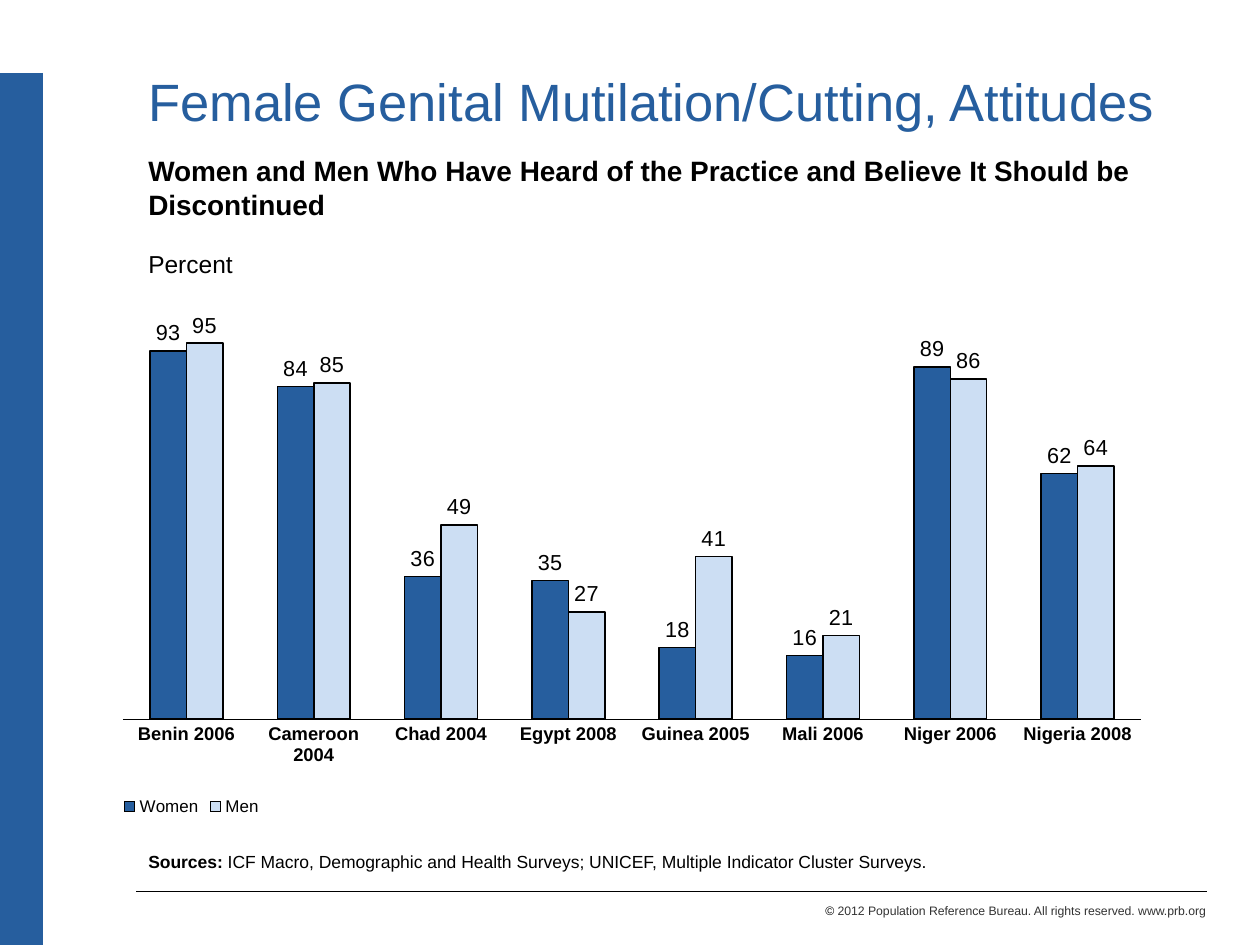
from lxml import etree
from pptx import Presentation
from pptx.chart.data import CategoryChartData
from pptx.dml.color import RGBColor
from pptx.enum.chart import XL_CHART_TYPE, XL_LABEL_POSITION, XL_LEGEND_POSITION, XL_TICK_MARK
from pptx.enum.shapes import MSO_CONNECTOR
from pptx.enum.text import PP_ALIGN
from pptx.oxml.ns import qn
from pptx.util import Cm, Pt

COLUMN = XL_CHART_TYPE.COLUMN_CLUSTERED
OUTSIDE = XL_LABEL_POSITION.OUTSIDE_END
BOTTOM = XL_LEGEND_POSITION.BOTTOM
NO_TICK = XL_TICK_MARK.NONE
STRAIGHT = MSO_CONNECTOR.STRAIGHT
LEFT, RIGHT = PP_ALIGN.LEFT, PP_ALIGN.RIGHT

FONT = "Arial"
BLUE, PALE, BLACK, GREY = "265E9E", "CCDEF3", "000000", "333333"
CATS = ["Benin 2006", "Cameroon 2004", "Chad 2004", "Egypt 2008",
        "Guinea 2005", "Mali 2006", "Niger 2006", "Nigeria 2008"]
SERIES = [
    ("Women", BLUE, [93, 84, 36, 35, 18, 16, 89, 62]),
    ("Men", PALE, [95, 85, 49, 27, 41, 21, 86, 64]),
]


def color(code):
    """Turn a hex string into a colour."""
    return RGBColor.from_string(code)


def style(font, size, code=BLACK, bold=False):
    """Set the look of a font."""
    font.name, font.size, font.bold = FONT, Pt(size), bold
    font.color.rgb = color(code)


def stroke(line, width, code=BLACK):
    """Set the width and colour of a line."""
    line.width = Pt(width)
    line.color.rgb = color(code)


def write(slide, box, *paras, size=10, align=LEFT, gap=0):
    """Add a text box; each paragraph is a list of (text, format) runs."""
    frame = slide.shapes.add_textbox(*map(Cm, box)).text_frame
    frame.word_wrap = True
    for index, runs in enumerate(paras):
        para = frame.add_paragraph() if index else frame.paragraphs[0]
        para.alignment = align
        para.space_before = Pt(gap if index else 0)
        for text, form in runs:
            run = para.add_run()
            run.text = text
            style(run.font, **{"size": size, **form})


def rule(slide, start, end, width, code=BLACK):
    """Draw a straight line without a shadow."""
    line = slide.shapes.add_connector(STRAIGHT, *map(Cm, start + end))
    stroke(line.line, width, code)
    etree.SubElement(line._element.spPr, qn("a:effectLst"))


def place(parent, index, **parts):
    """Give a chart part a manual layout."""
    for old in parent.findall(qn("c:layout")):
        parent.remove(old)
    layout = etree.Element(qn("c:layout"))
    manual = etree.SubElement(layout, qn("c:manualLayout"))
    for tag, value in parts.items():
        etree.SubElement(manual, qn("c:" + tag)).set("val", str(value))
    parent.insert(index, layout)


def header(slide, box):
    """Write the title, the subtitle and the unit."""
    left, top, width, height = box
    title = [("Female Genital Mutilation/Cutting, Attitudes", {"code": BLUE})]
    write(slide, (left, top, width, 2.74), title, size=30)
    lead = [("Women and Men Who Have Heard of the Practice and Believe It "
             "Should be Discontinued", {"size": 16, "bold": True})]
    write(slide, (left, top + 1.7, width, height - 1.7),
          lead, [("Percent", {"size": 14})], gap=16)


def bars(slide, box):
    """Add the column chart of women and men by country."""
    data = CategoryChartData()
    data.categories = CATS
    for name, _, vals in SERIES:
        data.add_series(name, vals)
    chart = slide.shapes.add_chart(COLUMN, *map(Cm, box), data).chart
    chart.has_title = False
    style(chart.font, 12.4, bold=True)

    plot = chart.plots[0]
    plot.gap_width, plot.overlap, plot.vary_by_categories = 150, 0, False
    for series, (_, code, _) in zip(plot.series, SERIES):
        series.format.fill.solid()
        series.format.fill.fore_color.rgb = color(code)
        stroke(series.format.line, 0.92)
        labels = series.data_labels
        labels.show_value, labels.position = True, OUTSIDE
        style(labels.font, 12.4)

    scale = chart.value_axis
    scale.minimum_scale, scale.maximum_scale = 0, 100
    scale.has_major_gridlines = scale.visible = False
    axis = chart.category_axis
    axis.major_tick_mark = axis.minor_tick_mark = NO_TICK
    stroke(axis.format.line, 0.23)
    style(axis.tick_labels.font, 10.5, bold=True)

    chart.has_legend = True
    legend = chart.legend
    legend.position, legend.include_in_layout = BOTTOM, False
    style(legend.font, 9.7)
    edge = {"xMode": "edge", "yMode": "edge"}
    place(legend._element, 1, **edge, x=0.01, y=0.92, w=0.14, h=0.07)
    place(chart._chartSpace.chart.plotArea, 0, layoutTarget="inner", **edge,
          x=0.014, y=0.024, w=0.975, h=0.762)


def footer(slide, box):
    """Write the sources, the rule below them and the copyright line."""
    left, top, width, height = box
    write(slide, (left, top, 19.89, 0.69),
          [("Sources: ", {"bold": True}),
           ("ICF Macro, Demographic and Health Surveys; UNICEF, "
            "Multiple Indicator Cluster Surveys.", {})])
    level = top + 0.94
    rule(slide, (left + width, level), (left, level), 0.5)
    write(slide, (left + 8.05, top + 1.04, width - 7.82, height - 1.04),
          [("© ", {}),
           ("2012 Population Reference Bureau. All rights reserved. "
            "www.prb.org", {"code": GREY})], size=7, align=RIGHT)


def main():
    """Build the slide and save it."""
    deck = Presentation()
    deck.slide_width, deck.slide_height = Cm(25.4), Cm(19.05)
    slide = deck.slides.add_slide(deck.slide_layouts[6])
    rule(slide, (0.43, 1.47), (0.43, 19.05), 25, BLUE)
    header(slide, (2.74, 1.27, 21.54, 4.42))
    bars(slide, (2.18, 6.27, 21.06, 10.46))
    footer(slide, (2.74, 17.04, 21.59, 1.6))
    deck.save("out.pptx")


if __name__ == "__main__":
    main()
